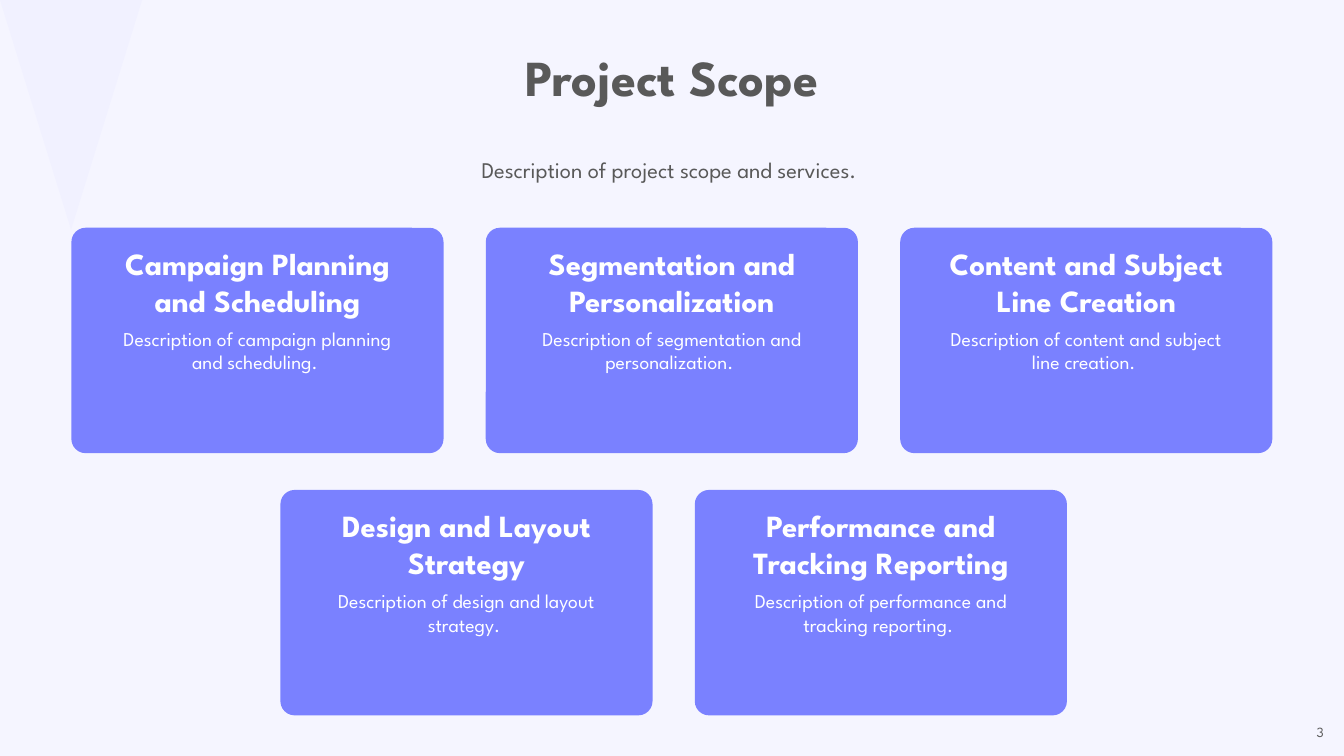
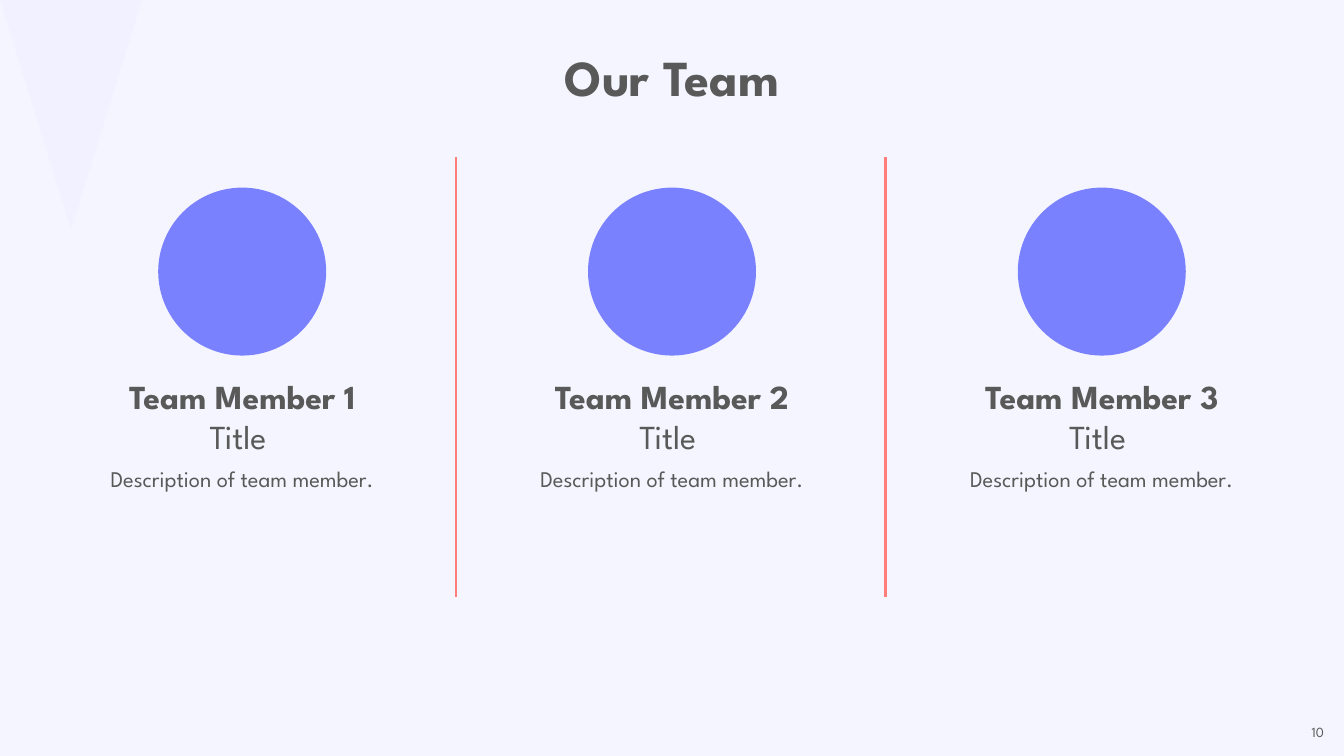
from dataclasses import dataclass

from lxml import etree
from pptx import Presentation
from pptx.dml.color import RGBColor
from pptx.enum.shapes import MSO_CONNECTOR, MSO_SHAPE
from pptx.enum.text import MSO_ANCHOR, MSO_AUTO_SIZE as AutoSize, PP_ALIGN as Align
from pptx.oxml.ns import qn
from pptx.util import Pt


@dataclass(frozen=True)
class Theme:
    font: str = "League Spartan"
    background: str = "F5F5FF"
    wedge: str = "F1F1FF"
    accent: str = "7A81FF"
    divider: str = "FF7E79"
    text: str = "595959"
    light_text: str = "FFFFFF"
    title_size: float = 36
    name_size: float = 24
    card_title_size: float = 22
    body_size: float = 16
    card_body_size: float = 14
    number_size: float = 10
    divider_width: float = 1.5


@dataclass(frozen=True)
class Box:
    """A rectangle in points."""
    left: float
    top: float
    width: float
    height: float

    def place(self):
        return Pt(self.left), Pt(self.top), Pt(self.width), Pt(self.height)

    def inside(self, left, top, width, height):
        """Return a box measured from this box's top left corner."""
        return Box(self.left + left, self.top + top, width, height)


@dataclass(frozen=True)
class Line:
    """One paragraph and its format."""
    text: str
    size: float
    bold: bool = False
    color: str = Theme.text
    space_before: float = 0


THEME = Theme()
PAGE = Box(0, 0, 960, 540)
WEDGE = Box(0, 0, 101.5, 164)
TITLE = Box(51, 29, 858, 51)
SUBTITLE = Box(51, 108, 858, 27)
NUMBER = Box(895, 511, 65, 24)
MARGINS = (7.2, 3.6, 7.2, 3.6)
NUMBER_MARGINS = (7.2, 5.8, 14.4, 5.8)

CARD = Box(0, 162.7, 265.8, 161)
CARD_GAP = 30.2
CARD_ROW_STEP = 187.3
CARD_CORNER = 0.063
CARD_ROWS = [
    (51, [
        ("Campaign Planning and Scheduling",
         "Description of campaign planning and scheduling. "),
        ("Segmentation and Personalization",
         "Description of segmentation and personalization. "),
        ("Content and Subject Line Creation",
         "Description of content and subject line creation. "),
    ]),
    (200.3, [
        ("Design and Layout Strategy",
         "Description of design and layout strategy. "),
        ("Performance and Tracking Reporting",
         "Description of performance and tracking reporting. "),
    ]),
]

TEAM = Box(19.5, 112.5, 921, 314)
MEMBERS = ["Team Member 1", "Team Member 2", "Team Member 3"]
PORTRAIT_SIZE = 120
MEMBER_TEXT_WIDTH = 233


def apply_format(target, values):
    for name, value in values.items():
        setattr(target, name, value)


def write_lines(frame, lines, align=Align.CENTER, margins=MARGINS, auto_size=AutoSize.SHAPE_TO_FIT_TEXT):
    left, top, right, bottom = map(Pt, margins)
    apply_format(frame, {
        "word_wrap": True, "auto_size": auto_size,
        "vertical_anchor": MSO_ANCHOR.TOP,
        "margin_left": left, "margin_top": top,
        "margin_right": right, "margin_bottom": bottom,
    })
    for index, line in enumerate(lines):
        paragraph = frame.add_paragraph() if index else frame.paragraphs[0]
        apply_format(paragraph, {"alignment": align, "space_before": Pt(line.space_before)})
        run = paragraph.add_run()
        run.text = line.text
        apply_format(run.font, {"name": THEME.font, "size": Pt(line.size), "bold": line.bold})
        run.font.color.rgb = RGBColor.from_string(line.color)


def add_text(slide, box, lines, **options):
    write_lines(slide.shapes.add_textbox(*box.place()).text_frame, lines, **options)


def add_filled_shape(slide, kind, box, color):
    shape = slide.shapes.add_shape(kind, *box.place())
    shape.shadow.inherit = False
    shape.fill.solid()
    shape.fill.fore_color.rgb = RGBColor.from_string(color)
    shape.line.fill.background()
    return shape


def add_divider(slide, x, top, bottom):
    divider = slide.shapes.add_connector(MSO_CONNECTOR.STRAIGHT, Pt(x), Pt(top), Pt(x), Pt(bottom))
    divider.line.width = Pt(THEME.divider_width)
    divider.line.color.rgb = RGBColor.from_string(THEME.divider)
    etree.SubElement(divider._element.spPr, qn("a:effectLst"))


def add_titled_slide(presentation, title, number):
    """Add a slide with the shared wedge, title and page number."""
    slide = presentation.slides.add_slide(presentation.slide_layouts[5])
    placeholder = slide.shapes.title
    wedge = add_filled_shape(slide, MSO_SHAPE.ISOSCELES_TRIANGLE, WEDGE, THEME.wedge)
    wedge.rotation = 180
    placeholder._element.addprevious(wedge._element)
    apply_format(placeholder, dict(zip(("left", "top", "width", "height"), TITLE.place())))
    write_lines(placeholder.text_frame, [Line(title, THEME.title_size, bold=True)],
                auto_size=AutoSize.NONE)
    add_text(slide, NUMBER, [Line(str(number), THEME.number_size)],
             align=Align.RIGHT, margins=NUMBER_MARGINS)
    return slide


def add_card(slide, box, heading, description):
    card = add_filled_shape(slide, MSO_SHAPE.ROUNDED_RECTANGLE, box, THEME.accent)
    card.adjustments[0] = CARD_CORNER
    add_text(slide, box.inside(18.4, 8.3, 229, 106.5), [
        Line(heading, THEME.card_title_size, True, THEME.light_text, 6),
        Line(description, THEME.card_body_size, False, THEME.light_text, 6),
    ])


def add_member(slide, column, name):
    """Place a portrait disc and its text, centred in the column."""
    portrait = column.inside((column.width - PORTRAIT_SIZE) / 2, 21.5, PORTRAIT_SIZE, PORTRAIT_SIZE)
    add_filled_shape(slide, MSO_SHAPE.OVAL, portrait, THEME.accent)
    text_left = (column.width - MEMBER_TEXT_WIDTH) / 2
    add_text(slide, column.inside(text_left, 152.5, MEMBER_TEXT_WIDTH, 110), [
        Line(name, THEME.name_size, bold=True),
        Line("Title ", THEME.name_size),
        Line("Description of team member.", THEME.body_size, space_before=6),
    ])


def build_scope_slide(presentation):
    slide = add_titled_slide(presentation, "Project Scope", 3)
    add_text(slide, SUBTITLE, [Line("Description of project scope and services. ", THEME.body_size)])
    for row, (row_left, cards) in enumerate(CARD_ROWS):
        for column, (heading, description) in enumerate(cards):
            box = CARD.inside(row_left + column * (CARD.width + CARD_GAP), row * CARD_ROW_STEP,
                              CARD.width, CARD.height)
            add_card(slide, box, heading, description)


def build_team_slide(presentation):
    slide = add_titled_slide(presentation, "Our Team", 10)
    width = TEAM.width / len(MEMBERS)
    for index, name in enumerate(MEMBERS):
        column = TEAM.inside(index * width, 0, width, TEAM.height)
        add_member(slide, column, name)
        if index:
            add_divider(slide, column.left - 1, TEAM.top, TEAM.top + TEAM.height)


def main():
    presentation = Presentation()
    apply_format(presentation, {"slide_width": Pt(PAGE.width), "slide_height": Pt(PAGE.height)})
    background = presentation.slide_master.background.fill
    background.solid()
    background.fore_color.rgb = RGBColor.from_string(THEME.background)
    build_scope_slide(presentation)
    build_team_slide(presentation)
    presentation.save("out.pptx")


if __name__ == "__main__":
    main()
